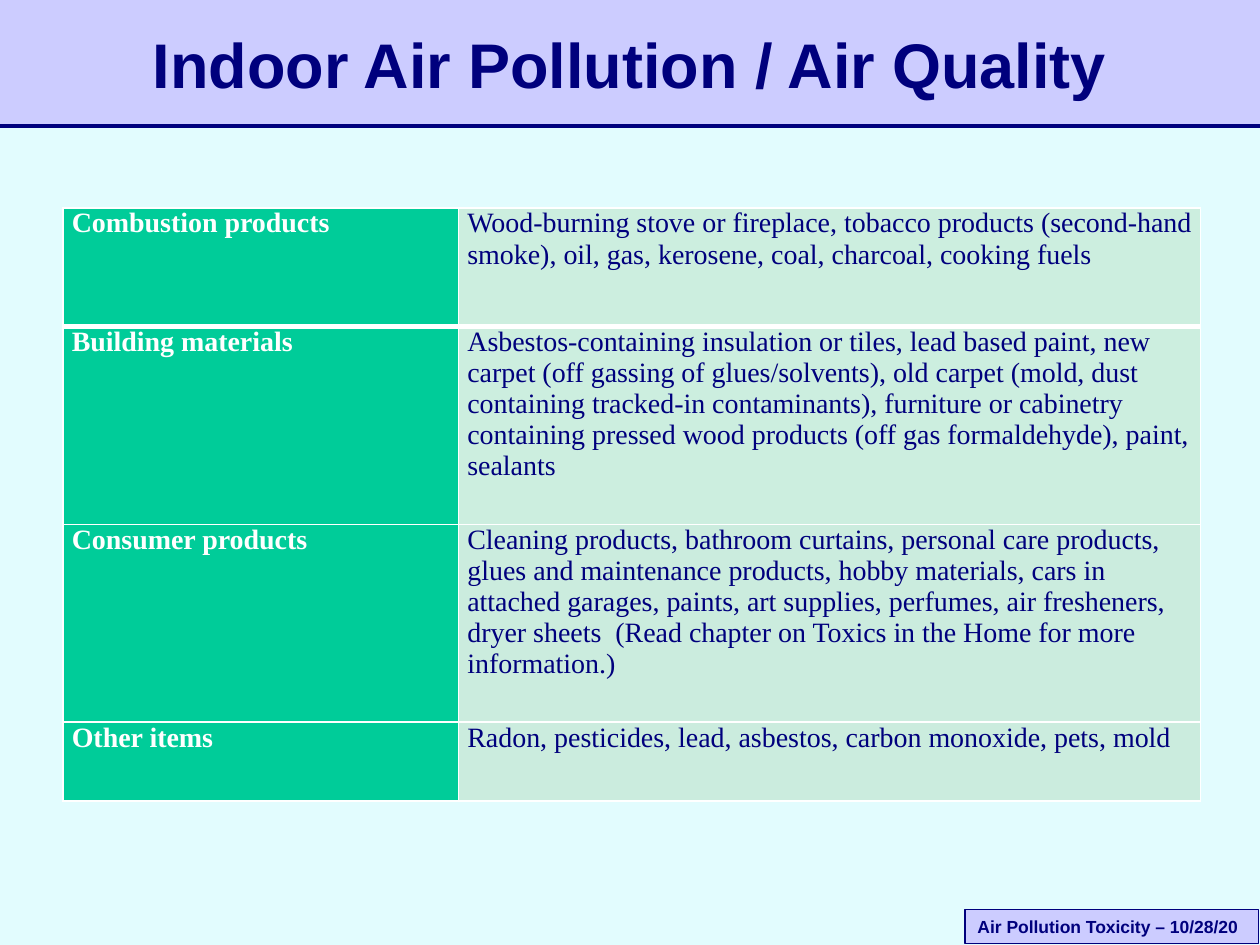
from dataclasses import dataclass

from lxml import etree
from pptx import Presentation, util as u
from pptx.dml.color import RGBColor
from pptx.enum import shapes, text
from pptx.oxml import ns

WIDE, HIGH = 10, 7.5
COLS = (3.14, 5.89)
UNIT = 0.314  # height of one row step of the table


@dataclass(frozen=True)
class Theme:
    back: str = "E2FCFE"
    band: str = "CCCCFF"
    navy: str = "00007D"
    green: str = "00CC99"
    mint: str = "CCEEDF"
    pale: str = "CBECDE"
    white: str = "FFFFFF"
    sans: str = "Arial"
    serif: str = "Times New Roman"
    head: int = 36
    body: int = 16
    note: int = 10


@dataclass(frozen=True)
class Source:
    name: str
    items: str
    steps: int
    fill: str
    top: int = 1
    base: int = 1


T = Theme()
SOURCES = (
    Source("Combustion products",
           "Wood-burning stove or fireplace, tobacco products (second-hand smoke), "
           "oil, gas, kerosene, coal, charcoal, cooking fuels", 3, T.mint, base=3),
    Source("Building materials",
           "Asbestos-containing insulation or tiles, lead based paint, new carpet "
           "(off gassing of glues/solvents), old carpet (mold, dust containing "
           "tracked-in contaminants), furniture or cabinetry containing pressed wood "
           "products (off gas formaldehyde), paint, sealants", 5, T.mint, top=3),
    Source("Consumer products",
           "Cleaning products, bathroom curtains, personal care products, glues and "
           "maintenance products, hobby materials, cars in attached garages, paints, "
           "art supplies, perfumes, air fresheners, dryer sheets  (Read chapter on "
           "Toxics in the Home for more information.)", 5, T.pale),
    Source("Other items",
           "Radon, pesticides, lead, asbestos, carbon monoxide, pets, mold", 2, T.pale),
)


def tint(fill, hue: str) -> None:
    fill.solid()
    fill.fore_color.rgb = RGBColor.from_string(hue)


def write(frame, words: str, size: int, face: str, hue: str, bold: bool,
          align=text.PP_ALIGN.LEFT) -> None:
    frame.text = words
    frame.word_wrap = True
    para = frame.paragraphs[0]
    para.alignment = align
    font = para.font
    font.size, font.name, font.bold = u.Pt(size), face, bold
    font.color.rgb = RGBColor.from_string(hue)


def block(slide, left: float, top: float, wide: float, high: float):
    """Add a plain rectangle in the band colour."""
    box = slide.shapes.add_shape(shapes.MSO_SHAPE.RECTANGLE,
                                 *map(u.Inches, (left, top, wide, high)))
    box.shadow.inherit = False
    tint(box.fill, T.band)
    box.line.fill.background()
    return box


def rule(slide, top: float) -> None:
    """Draw a line across the whole slide."""
    line = slide.shapes.add_connector(shapes.MSO_CONNECTOR.STRAIGHT, 0, u.Inches(top),
                                      u.Inches(WIDE), u.Inches(top))
    line.line.width = u.Pt(2)
    line.line.color.rgb = RGBColor.from_string(T.navy)
    etree.SubElement(line._element.spPr, ns.qn("a:effectLst"))


def edge(cell, top: int, base: int) -> None:
    """Give a cell white borders, with widths in points."""
    props = cell._tc.get_or_add_tcPr()
    for side, width in zip("LRTB", (1, 1, top, base)):
        line = etree.SubElement(props, ns.qn(f"a:ln{side}"), w=str(u.Pt(width)))
        fill = etree.SubElement(line, ns.qn("a:solidFill"))
        etree.SubElement(fill, ns.qn("a:srgbClr"), val=T.white)


def fill_cell(cell, words: str, row: Source, back: str, hue: str, bold: bool) -> None:
    cell.margin_left = cell.margin_right = u.Inches(0.07)
    cell.margin_top = cell.margin_bottom = 0
    edge(cell, row.top, row.base)
    tint(cell.fill, back)
    write(cell.text_frame, words, T.body, T.serif, hue, bold)


def add_grid(slide, left: float, top: float) -> None:
    high = UNIT * sum(row.steps for row in SOURCES)
    grid = slide.shapes.add_table(len(SOURCES), len(COLS), *map(
        u.Inches, (left, top, sum(COLS), high))).table
    grid.first_row = grid.horz_banding = False
    for col, wide in zip(grid.columns, COLS):
        col.width = u.Inches(wide)
    for line, row in zip(grid.rows, SOURCES):
        line.height = u.Inches(UNIT * row.steps)
        name, items = line.cells
        fill_cell(name, row.name, row, T.green, T.white, True)
        fill_cell(items, row.items, row, row.fill, T.navy, False)


def add_title(slide, words: str) -> None:
    title = slide.shapes.title
    title.left, title.top, title.width, title.height = map(
        u.Inches, (0.75, 0.15, 8.5, 0.71))
    title.text_frame.vertical_anchor = text.MSO_ANCHOR.MIDDLE
    write(title.text_frame, words, T.head, T.sans, T.navy, True, text.PP_ALIGN.CENTER)
    # Bring the title in front of the band
    slide.shapes._spTree.append(title._element)


def add_badge(slide, words: str) -> None:
    badge = block(slide, 7.66, 7.22, 2.33, 0.27)
    badge.line.width = u.Pt(0.75)
    badge.line.color.rgb = RGBColor.from_string(T.navy)
    write(badge.text_frame, words, T.note, T.sans, T.navy, True)


def main() -> None:
    deck = Presentation()
    deck.slide_width, deck.slide_height = u.Inches(WIDE), u.Inches(HIGH)
    slide = deck.slides.add_slide(deck.slide_layouts.get_by_name("Title Only"))
    tint(slide.background.fill, T.back)
    block(slide, 0, 0, WIDE, 1)
    rule(slide, 1)
    add_badge(slide, "Air Pollution Toxicity – 10/28/20")
    add_title(slide, "Indoor Air Pollution / Air Quality")
    add_grid(slide, 0.5, 1.65)
    deck.save("out.pptx")


if __name__ == "__main__":
    main()
